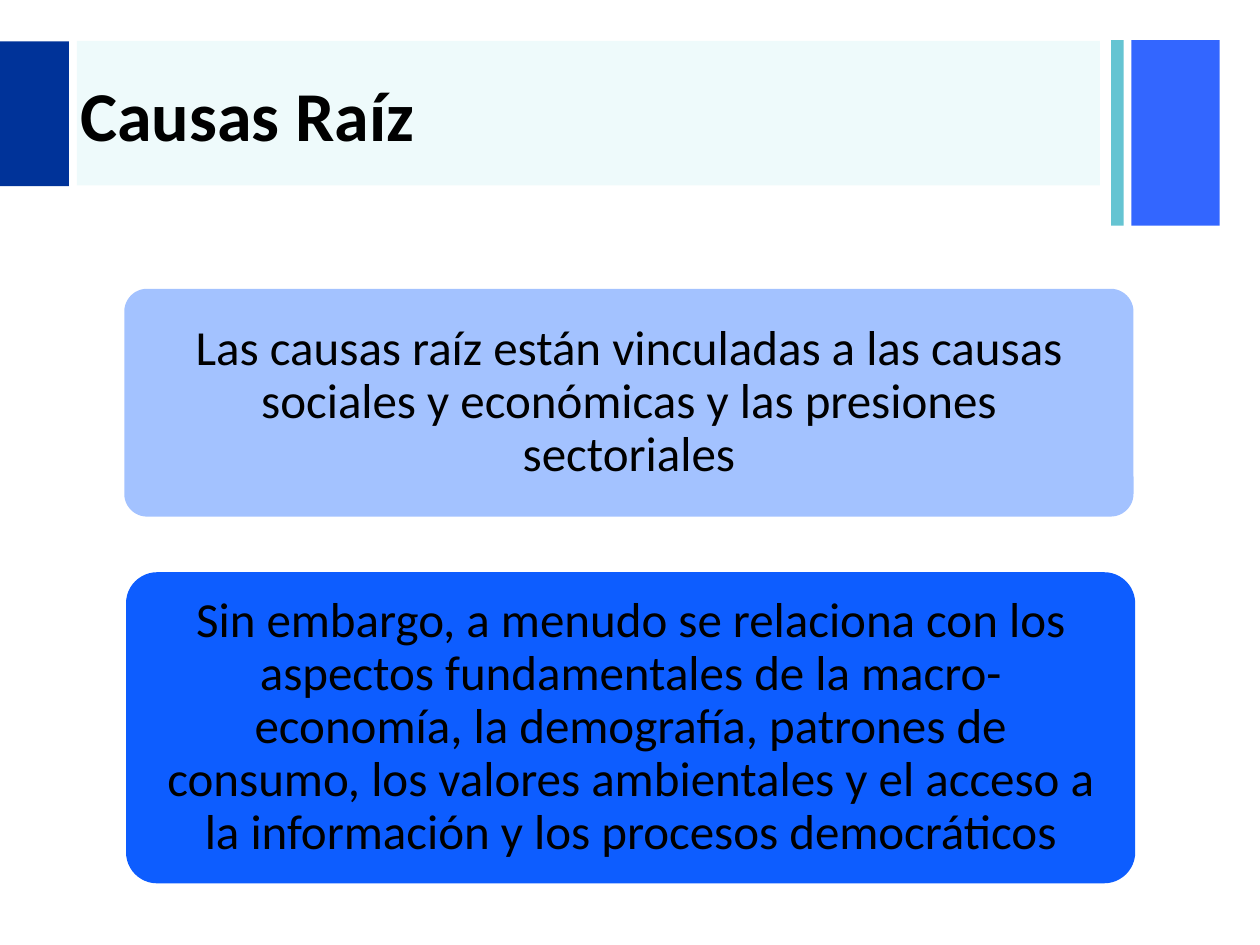
from dataclasses import dataclass

from lxml.etree import SubElement
from pptx import Presentation
from pptx.dml.color import RGBColor as Rgb
from pptx.enum.shapes import MSO_SHAPE as Kind
from pptx.enum.text import MSO_ANCHOR as Anchor, PP_ALIGN as Align
from pptx.oxml.ns import qn
from pptx.slide import Slide
from pptx.util import Pt

HUES = {
    "navy": "003399",
    "blue": "3366FF",
    "teal": "65C4D2",
    "aqua": "14C5D0",
    "pale": "A3C2FF",
    "vivid": "0D5DFF",
    "ink": "000000",
}


def write(shape, text, font="Calibri", size=28, bold=False, hue="ink",
          align=Align.LEFT, lead=1.0, inset=(7.2, 3.6)):
    """Put one formatted paragraph in a shape, centred in height."""
    frame = shape.text_frame
    frame.word_wrap = True
    frame.vertical_anchor = Anchor.MIDDLE
    frame.margin_left = frame.margin_right = Pt(inset[0])
    frame.margin_top = frame.margin_bottom = Pt(inset[1])
    para = frame.paragraphs[0]
    para.alignment = align
    para.line_spacing = lead
    run = para.add_run()
    run.text = text
    run.font.name = font
    run.font.size = Pt(size)
    run.font.bold = bold
    run.font.color.rgb = Rgb.from_string(HUES[hue])


@dataclass
class Deck:
    """Hold the style and the current slide."""

    slide: Slide
    curve: float = 0.1
    lead: float = 0.9

    def block(self, box, hue, kind=Kind.RECTANGLE, alpha=None):
        """Add a plain filled shape."""
        shape = self.slide.shapes.add_shape(kind, *map(Pt, box))
        shape.shadow.inherit = False
        shape.fill.solid()
        shape.fill.fore_color.rgb = Rgb.from_string(HUES[hue])
        shape.line.fill.background()
        if alpha is not None:
            tint = shape.fill._xPr.find(".//" + qn("a:srgbClr"))
            SubElement(tint, qn("a:alpha"), val=str(alpha * 1000))
        return shape

    def title(self, box, text):
        """Add the heading."""
        area = self.slide.shapes.add_textbox(*map(Pt, box))
        write(area, text, size=40, bold=True)

    def card(self, box, hue, text):
        """Add a rounded panel with centred text."""
        panel = self.block(box, hue, Kind.ROUNDED_RECTANGLE)
        panel.adjustments[0] = self.curve
        write(panel, text, align=Align.CENTER, lead=self.lead, inset=(16, 10))


def main():
    """Build the slide and save it."""
    show = Presentation()
    show.slide_width, show.slide_height = Pt(720), Pt(540)
    deck = Deck(show.slides.add_slide(show.slide_layouts[6]))

    deck.block((646.5, 23, 50.5, 106), "blue")
    deck.block((635, 23, 7.2, 106), "teal")
    deck.block((44, 23.4, 584.6, 82.6), "aqua", alpha=7)
    deck.block((0, 23.6, 39.4, 82.8), "navy")
    deck.title((38.9, 24.5, 595.5, 80.6), "Causas Raíz")

    deck.card((71, 165, 576.7, 130.2), "pale",
              "Las causas raíz están vinculadas a las causas sociales y "
              "económicas y las presiones sectoriales")
    deck.card((72, 327, 576.7, 177.8), "vivid",
              "Sin embargo, a menudo se relaciona con los aspectos "
              "fundamentales de la macro-economía, la demografía, patrones "
              "de consumo, los valores ambientales y el acceso a la "
              "información y los procesos democráticos")

    show.save("out.pptx")


if __name__ == "__main__":
    main()
